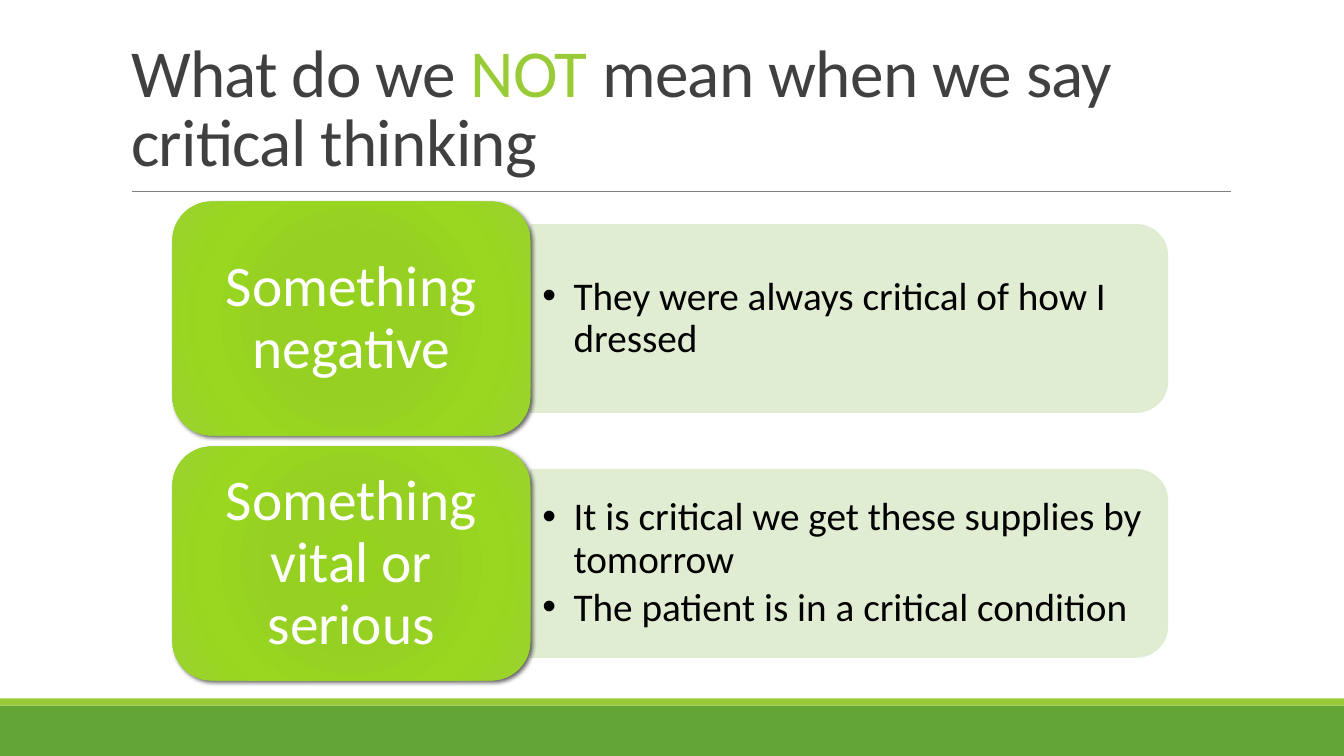
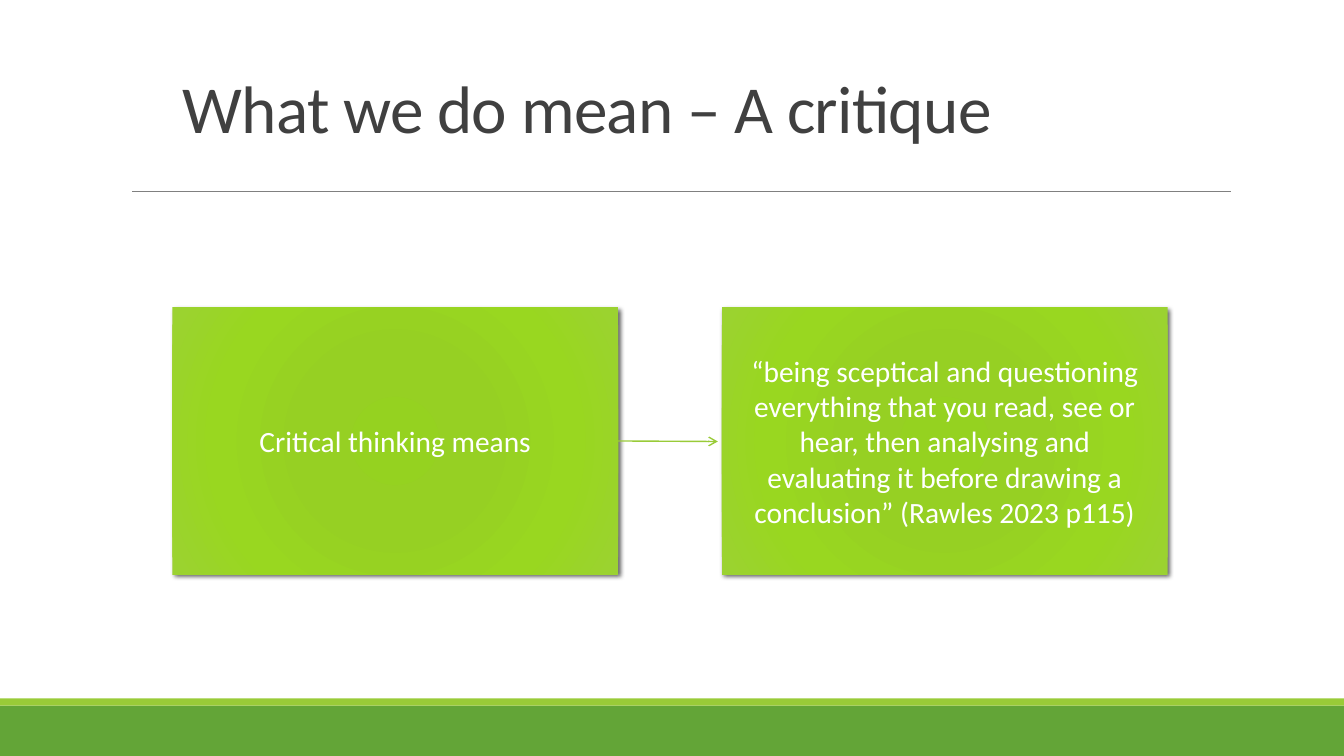
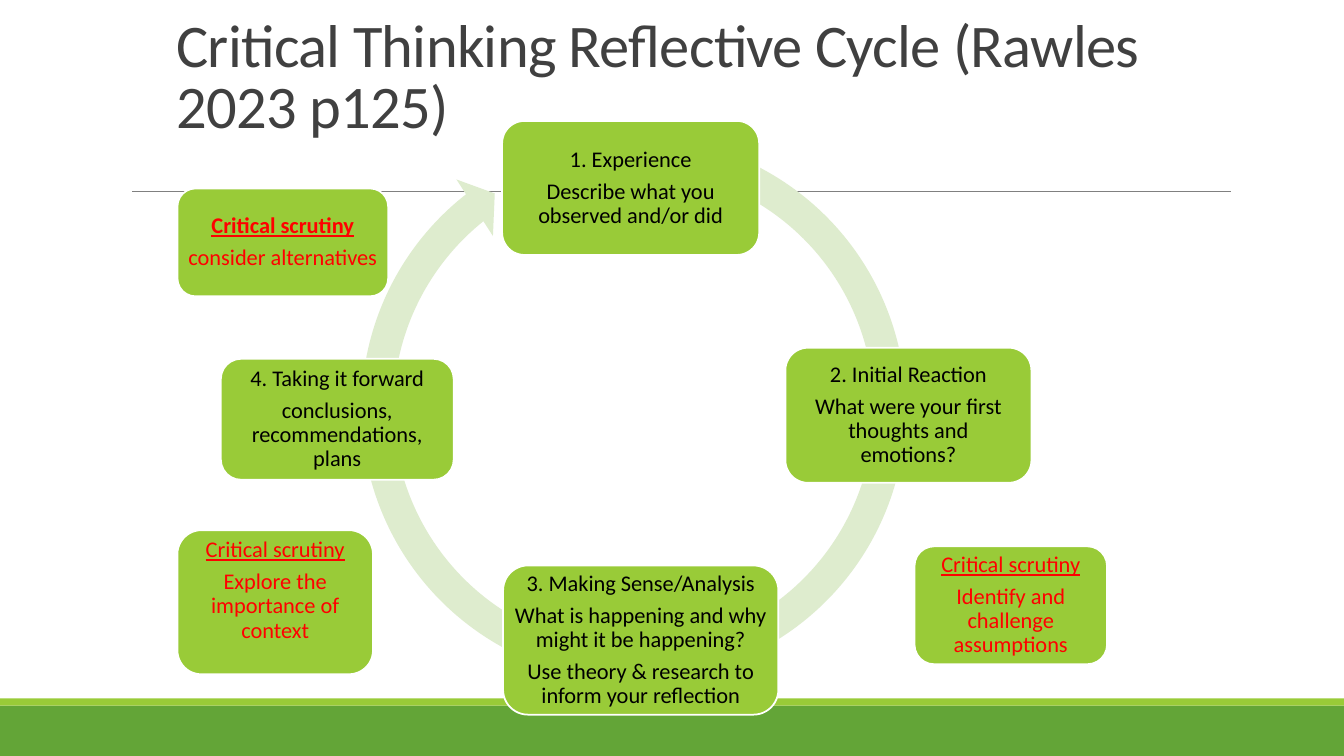
from dataclasses import dataclass

from lxml.etree import SubElement
from pptx import Presentation
from pptx.dml.color import RGBColor
from pptx.enum.shapes import MSO_CONNECTOR, MSO_SHAPE as SHAPE
from pptx.enum.text import MSO_ANCHOR as ANCHOR, MSO_AUTO_SIZE, PP_ALIGN as ALIGN
from pptx.oxml import parse_xml
from pptx.oxml.ns import nsdecls, qn
from pptx.util import Inches, Pt


@dataclass(frozen=True)
class Theme:
    font: str = "Calibri"
    band: str = "63A537"
    accent: str = "99CB38"
    pale: str = "DEECCE"
    rule: str = "808080"
    heading: str = "404040"
    dark: str = "000000"
    light: str = "FFFFFF"
    alert: str = "FF0000"
    gradient: tuple = ((0, "95D220"), (34, "96D023"), (70, "99D720"), (100, "9BD231"))
    title_size: float = 48
    long_title_size: float = 43.2
    label_size: float = 41
    bullet_size: float = 28
    panel_size: float = 21
    step_size: float = 16


T = Theme()


# Formatting
def rgb(color):
    return RGBColor.from_string(color)


def write(tf, paragraphs, *, size, color, align=ALIGN.CENTER, anchor=ANCHOR.MIDDLE,
          insets=(0.1, 0.05, 0.1, 0.05), line=0.9, after=0.35, tracking=None, bullet=None):
    """Each paragraph is a list of (text, overrides); after is a share of the size."""
    tf.word_wrap = True
    tf.auto_size = MSO_AUTO_SIZE.NONE
    tf.vertical_anchor = anchor
    tf.margin_left, tf.margin_top, tf.margin_right, tf.margin_bottom = map(Inches, insets)
    for i, runs in enumerate(paragraphs):
        p = tf.add_paragraph() if i else tf.paragraphs[0]
        p.alignment, p.line_spacing = align, line
        p.space_before, p.space_after = Pt(0), Pt(round(size * after, 1))
        if bullet:
            add_bullet(p, bullet)
        for text, style in runs:
            r = p.add_run()
            r.text = text
            r.font.name, r.font.size = T.font, Pt(size)
            r.font.color.rgb = rgb(style.get("color", color))
            r.font.bold = style.get("bold", False)
            r.font.underline = style.get("underline", False)
            if tracking:
                r.font._element.set("spc", str(int(tracking * 100)))


def plain(*texts):
    return [[(text, {})] for text in texts]


def add_bullet(p, char, indent=0.31):
    pPr = p._p.get_or_add_pPr()
    pPr.set("marL", str(Inches(indent)))
    pPr.set("indent", str(-Inches(indent)))
    SubElement(pPr, qn("a:buFont"), typeface="Arial")
    SubElement(pPr, qn("a:buChar"), char=char)


def set_alpha(s, percent):
    for clr in s._element.spPr.iter(qn("a:srgbClr")):
        SubElement(clr, qn("a:alpha"), val=str(percent * 1000))


def make_glossy(s):
    """Radial green fill with a soft shadow."""
    stops = "".join(f'<a:gs pos="{pos * 1000}"><a:srgbClr val="{color}"/></a:gs>'
                    for pos, color in T.gradient)
    spPr = s._element.spPr
    s.fill.background()
    spPr.replace(spPr.find(qn("a:noFill")), parse_xml(
        f'<a:gradFill {nsdecls("a")} rotWithShape="1"><a:gsLst>{stops}</a:gsLst>'
        '<a:path path="circle"><a:fillToRect l="100000" t="100000" r="100000" b="100000"/>'
        '</a:path></a:gradFill>'))
    spPr.find(qn("a:effectLst")).append(parse_xml(
        f'<a:outerShdw {nsdecls("a")} blurRad="{Pt(3)}" dist="{Pt(2)}" dir="2700000" '
        'algn="ctr" rotWithShape="0"><a:srgbClr val="000000"><a:alpha val="60000"/>'
        '</a:srgbClr></a:outerShdw>'))


# Elements
def add_box(slide, kind, at, fill=None, line=None, width=1.25):
    s = slide.shapes.add_shape(kind, *map(Inches, at))
    s.shadow.inherit = False
    if fill:
        s.fill.solid()
        s.fill.fore_color.rgb = rgb(fill)
    if line:
        s.line.color.rgb = rgb(line)
        s.line.width = Pt(width)
    else:
        s.line.fill.background()
    return s


def add_line(slide, start, end, color, width, arrow=False):
    s = slide.shapes.add_connector(MSO_CONNECTOR.STRAIGHT, *map(Inches, start + end))
    s.line.color.rgb = rgb(color)
    s.line.width = Pt(width)
    if arrow:
        SubElement(s.line._get_or_add_ln(), qn("a:tailEnd"), type="arrow")
    SubElement(s._element.spPr, qn("a:effectLst"))
    return s


def add_glossy(slide, kind, at, text, **style):
    s = add_box(slide, kind, at)
    make_glossy(s)
    write(s.text_frame, plain(text), color=T.light, **style)
    return s


def add_row(slide, top, label, points):
    """A large label with its bullet points on a pale panel."""
    left, label_w, label_h = 1.71, 3.55, 2.32
    panel_w, panel_h = 6.32, 1.86
    panel_left, middle = left + label_w, top + label_h / 2
    # The panel is a tall shape on its side, so its rounded end faces right
    panel = add_box(slide, SHAPE.ROUND_2_SAME_RECTANGLE,
                    (panel_left + (panel_w - panel_h) / 2, middle - panel_w / 2,
                     panel_h, panel_w), T.pale, T.pale, 1)
    panel.rotation = 90
    set_alpha(panel, 90)
    tb = slide.shapes.add_textbox(*map(Inches, (panel_left, middle - 0.84, 6.23, 1.68)))
    write(tb.text_frame, plain(*points), size=T.bullet_size, color=T.dark,
          align=ALIGN.LEFT, insets=(0.12, 0.06, 0.12, 0.06), after=0.15, bullet="•")
    add_glossy(slide, SHAPE.ROUNDED_RECTANGLE, (left, top, label_w, label_h), label,
               size=T.label_size, insets=(0.17, 0.09, 0.17, 0.09))


def add_step(slide, at, paragraphs, color=T.dark, inset=0.07, bottom=None):
    s = add_box(slide, SHAPE.ROUNDED_RECTANGLE, at, T.accent, T.light)
    write(s.text_frame, paragraphs, size=T.step_size, color=color,
          insets=(inset, inset, inset, bottom or inset))


def add_scrutiny(slide, at, text, bold=False, **style):
    heading = [("Critical scrutiny", {"underline": True, "bold": bold})]
    add_step(slide, at, [heading, [(text, {})]], color=T.alert, **style)


# Shared layout
def build_layout(prs):
    """Draw the bands and the rule once, then move them to the layout."""
    layout = prs.slide_layouts.get_by_name("Title Only")
    slide = prs.slides.add_slide(layout)
    parts = (add_box(slide, SHAPE.RECTANGLE, (0, 7, 13.33, 0.5), T.band),
             add_box(slide, SHAPE.RECTANGLE, (0, 6.93, 13.33, 0.07), T.accent),
             add_line(slide, (1.31, 1.9), (12.21, 1.9), T.rule, 0.5))
    for s in parts:
        layout.shapes.element.append(s._element)
    return layout, slide


def set_title(slide, at, runs, size=T.title_size, anchor=ANCHOR.MIDDLE):
    title = slide.shapes.title
    title.left, title.top, title.width, title.height = map(Inches, at)
    write(title.text_frame, [runs], size=size, color=T.heading, align=ALIGN.LEFT,
          anchor=anchor, line=0.85, after=0, tracking=-0.5)


# Slides
def fill_not_meant(slide):
    set_title(slide, (1.2, 0.31, 11, 1.59),
              [("What do we ", {}), ("NOT", {"color": T.accent}),
               (" mean when we say critical thinking", {})])
    rows = (("Something negative", ["They were always critical of how I dressed"]),
            ("Something vital or serious",
             ["It is critical we get these supplies by tomorrow",
              "The patient is in a critical condition"]))
    for i, (label, points) in enumerate(rows):
        add_row(slide, 2 + i * 2.43, label, points)


def fill_critique(slide):
    set_title(slide, (1.71, 0.4, 9.87, 1.45), [("What we do mean – A critique", {})])
    texts = ("Critical thinking means",
             "“being sceptical and questioning everything that you read, see or hear, "
             "then analysing and evaluating it before drawing a conclusion” "
             "(Rawles 2023 p115)")
    boxes = [add_glossy(slide, SHAPE.RECTANGLE, (1.71 + i * 5.45, 3.05, 4.42, 2.65), text,
                        size=T.panel_size, insets=(0.22, 0.23, 0.22, 0.23), line=1)
             for i, text in enumerate(texts)]
    arrow = add_line(slide, (6.13, 4.38), (7.12, 4.38), T.accent, 1, arrow=True)
    arrow.begin_connect(boxes[0], 3)


def fill_cycle(slide):
    set_title(slide, (1.65, 0, 9.87, 1.45),
              [("Critical Thinking Reflective Cycle (Rawles 2023 p125)", {})],
              size=T.long_title_size, anchor=ANCHOR.BOTTOM)
    ring = add_box(slide, SHAPE.CIRCULAR_ARROW, (3.41, 1.18, 5.75, 5.75), T.pale)
    for i, value in enumerate((0.055, 3.307, 139, 173.109, 0.058)):
        ring.adjustments[i] = value

    add_step(slide, (4.98, 1.2, 2.55, 1.33),
             plain("1. Experience", "Describe what you observed and/or did"))
    add_step(slide, (7.79, 3.45, 2.44, 1.34),
             plain("2. Initial Reaction", "What were your first thoughts and emotions?"))
    add_step(slide, (4.99, 5.61, 2.73, 1.48),
             plain("3. Making Sense/Analysis",
                   "What is happening and why might it be happening?",
                   "Use theory & research to inform your reflection"), inset=0.03)
    add_step(slide, (2.19, 3.56, 2.31, 1.2),
             plain("4. Taking it forward", "conclusions, recommendations, plans"))

    add_scrutiny(slide, (1.76, 1.87, 2.09, 1.07), "consider alternatives",
                 bold=True, inset=0.04)
    add_scrutiny(slide, (9.07, 5.42, 1.91, 1.17), "Identify and challenge assumptions")
    add_scrutiny(slide, (1.76, 5.26, 1.94, 1.43), "Explore the importance of context",
                 bottom=0.3)


def main():
    prs = Presentation()
    prs.slide_width, prs.slide_height = Inches(13.33), Inches(7.5)
    layout, first = build_layout(prs)
    fill_not_meant(first)
    for fill_slide in (fill_critique, fill_cycle):
        fill_slide(prs.slides.add_slide(layout))
    prs.save("out.pptx")


if __name__ == "__main__":
    main()
